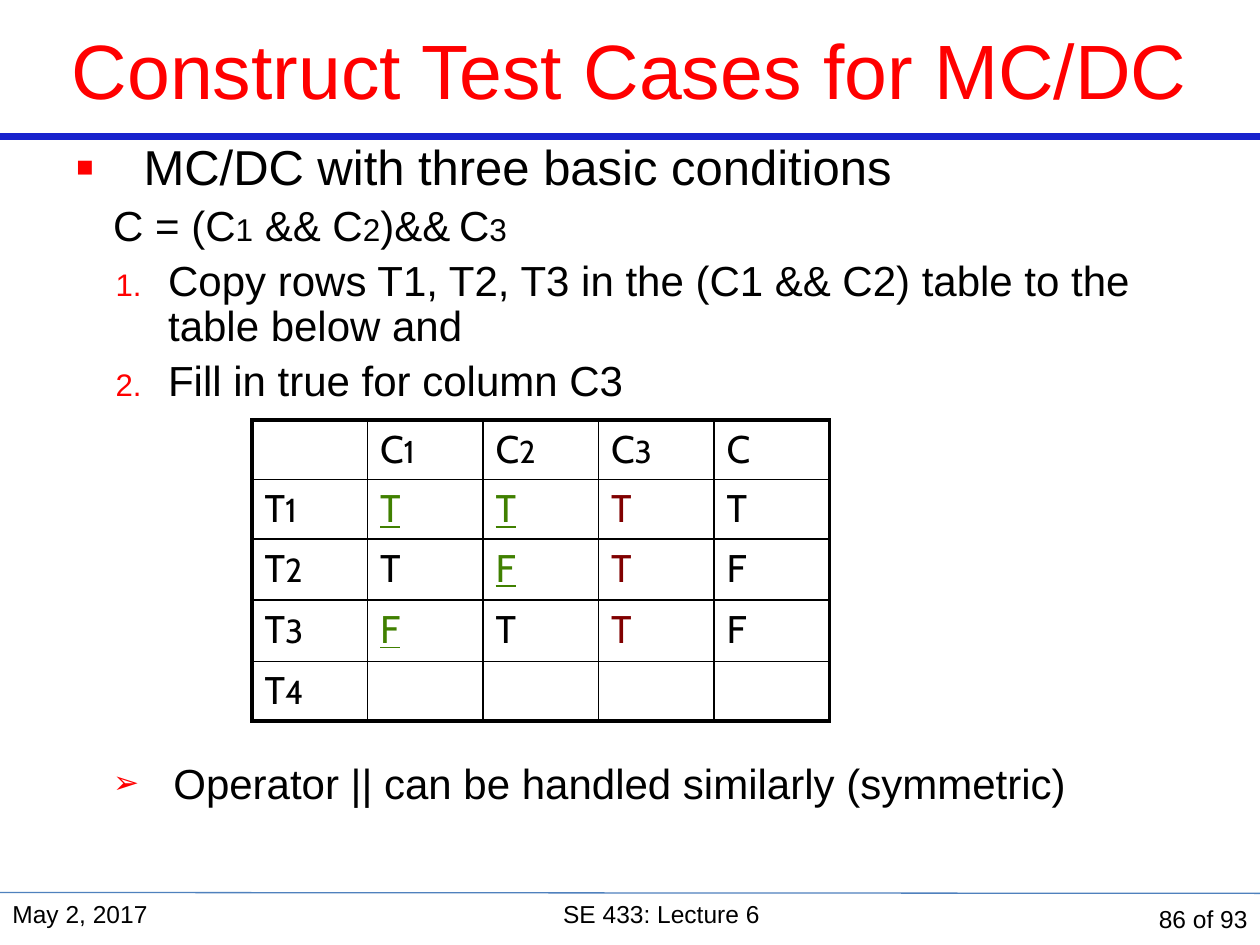
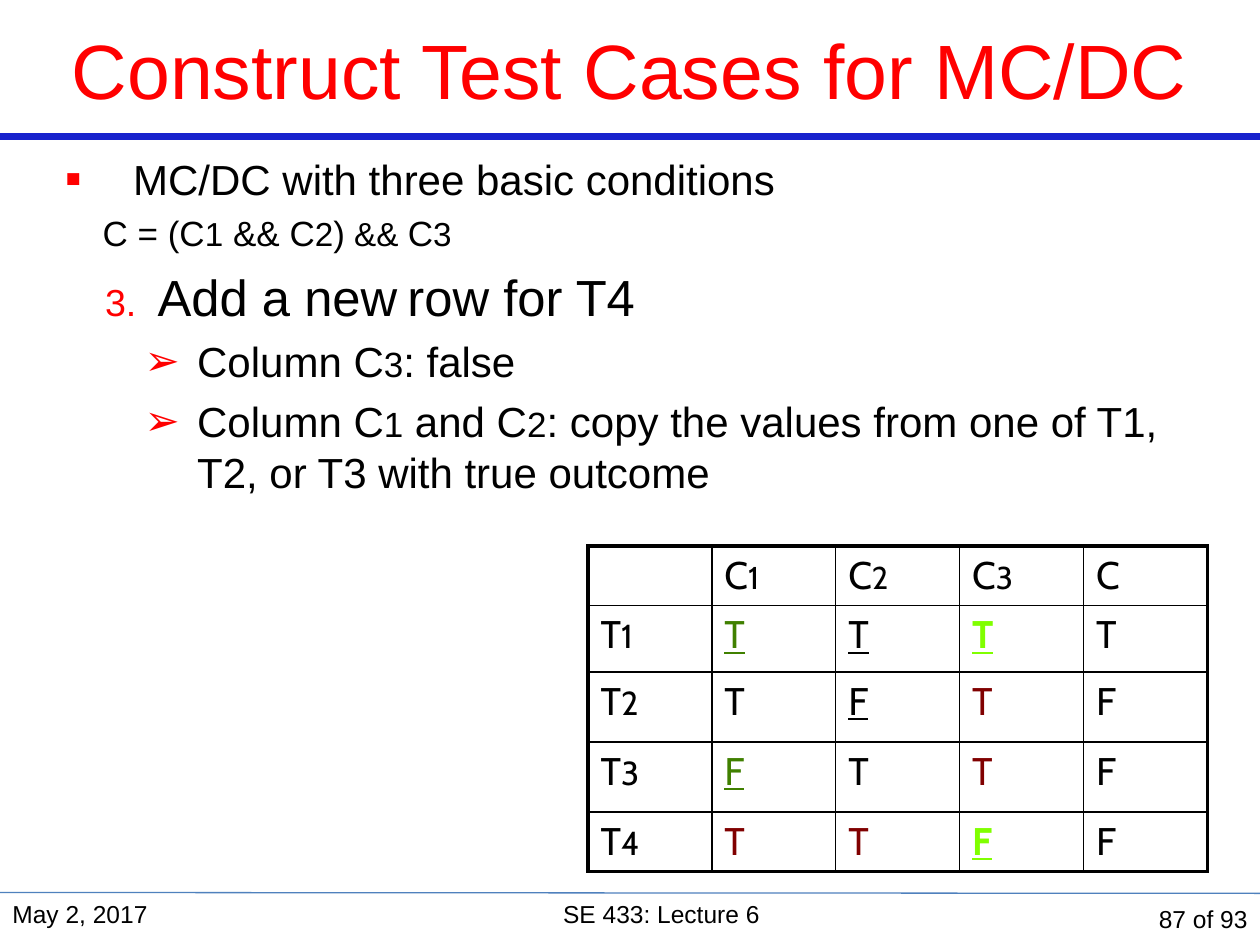
from lxml import etree
from pptx import Presentation
from pptx import util as u
from pptx.dml import color
from pptx.enum import shapes, text
from pptx.oxml import ns

Pt = u.Pt
BLACK, RED, BLUE, STEEL = "000000", "FF0000", "1822CD", "4F81BD"
GREEN, LIME, MAROON = "408000", "80FF00", "800000"
BODY_FONT, TABLE_FONT = "Arial", "Cabin"
TITLE = "Construct Test Cases for MC/DC"
MARKS = {
    "": {"ink": BLACK},
    "green": {"ink": GREEN, "underline": True},
    "under": {"ink": BLACK, "underline": True},
    "lime": {"ink": LIME, "underline": True, "bold": True},
    "maroon": {"ink": MAROON},
}
SQUARE = {"tag": "a:buChar", "char": "▪"}
ARROW = {"tag": "a:buChar", "char": "➢"}
NUMBER = {"tag": "a:buAutoNum", "type": "arabicPeriod"}
SIZE_SWITCH = "~"
HEADINGS = ["", "C~1", "C~2", "C~3", "C"]


def rgb(value):
    return color.RGBColor.from_string(value)


def put(target, values):
    for name, value in values.items():
        setattr(target, name, value)


def add(parent, tag, **attributes):
    child = etree.SubElement(parent, ns.qn(tag))
    for name, value in attributes.items():
        child.set(name, str(value))
    return child


class Deck:
    """Lecture slides with one shared style."""

    def __init__(self):
        self.prs = Presentation()
        put(self.prs, {"slide_width": Pt(720), "slide_height": Pt(540)})
        self.slide = None

    def new_slide(self, number):
        self.slide = self.prs.slides.add_slide(self.prs.slide_layouts[6])
        self.rule(78, 78, BLUE, 4.5)
        self.rule(510, 510.5, STEEL, 0.75)
        middle, align = text.MSO_ANCHOR.MIDDLE, text.PP_ALIGN
        self.label(TITLE, (0, 0, 720, 78), 44, RED, align.CENTER, middle)
        self.label("May 2, 2017", (0, 510, 156, 30), 14)
        self.label("SE 433: Lecture 6", (156, 510, 444, 30), 14, BLACK, align.CENTER)
        self.label(f"{number} of 93", (600, 510, 120, 30), 14, BLACK, align.RIGHT, middle)

    def rule(self, start, end, ink, width):
        line = self.slide.shapes.add_connector(
            shapes.MSO_CONNECTOR.STRAIGHT, Pt(0), Pt(start), Pt(720), Pt(end))
        line.line.color.rgb = rgb(ink)
        line.line.width = Pt(width)
        add(line._element.spPr, "a:effectLst")

    def frame(self, box, anchor=text.MSO_ANCHOR.TOP):
        frame = self.slide.shapes.add_textbox(*map(Pt, box)).text_frame
        put(frame, {"word_wrap": True, "vertical_anchor": anchor})
        return frame

    def add_wording(self, paragraph, wording, sizes, font=BODY_FONT, ink=BLACK, **look):
        for index, part in enumerate(wording.split(SIZE_SWITCH)):
            run = paragraph.add_run()
            run.text = part
            put(run.font, {"name": font, "size": Pt(sizes[index % 2]), **look})
            run.font.color.rgb = rgb(ink)

    def label(self, wording, box, size, ink=BLACK, align=text.PP_ALIGN.LEFT,
              anchor=text.MSO_ANCHOR.TOP):
        paragraph = self.frame(box, anchor).paragraphs[0]
        paragraph.alignment = align
        self.add_wording(paragraph, wording, (size,) * 2, ink=ink)

    def body(self, box, spacing, points):
        frame = self.frame(box)
        for index, point in enumerate(points):
            paragraph = frame.add_paragraph() if index else frame.paragraphs[0]
            self.point(paragraph, spacing, **point)

    def point(self, paragraph, spacing, wording, sizes, level=1, margin=53, hang=30,
              bullet=None, scale=74, gap=None):
        put(paragraph, {"level": level, "line_spacing": spacing,
                        "space_before": Pt(gap or round(0.23 * sizes[0], 1))})
        properties = paragraph._p.get_or_add_pPr()
        properties.set("marL", str(Pt(margin)))
        properties.set("indent", str(-Pt(hang)))
        if bullet:
            add(add(properties, "a:buClr"), "a:srgbClr", val=RED)
            add(properties, "a:buSzPct", val=scale * 1000)
            add(properties, "a:buFont", typeface=BODY_FONT)
            add(properties, **bullet)
        self.add_wording(paragraph, wording, sizes)

    def truth_table(self, left, top, column, heights, rows):
        cells = [HEADINGS] + [[f"T~{i}"] + row for i, row in enumerate(rows, 1)]
        last_row, last_column = len(cells) - 1, len(HEADINGS) - 1
        table = self.slide.shapes.add_table(
            len(cells), len(HEADINGS), Pt(left), Pt(top),
            Pt(column * len(HEADINGS)), Pt(sum(heights))).table
        put(table, {"first_row": False, "horz_banding": False})
        for r, (row, height) in enumerate(zip(cells, heights)):
            table.rows[r].height = Pt(height)
            for c, entry in enumerate(row):
                cell = table.cell(r, c)
                self.borders(cell, L=c == 0, R=c == last_column, T=r == 0, B=r == last_row)
                cell.fill.background()
                paragraph = cell.text_frame.paragraphs[0]
                paragraph.space_before = Pt(6)
                wording, _, mark = entry.partition(" ")
                if wording:
                    self.add_wording(paragraph, wording, (22, 19 if r else 18), TABLE_FONT,
                                     **MARKS[mark])

    def borders(self, cell, **outer):
        for side, is_outer in outer.items():
            line = add(cell._tc.get_or_add_tcPr(), f"a:ln{side}",
                       w=Pt(2.25 if is_outer else 1))
            add(add(line, "a:solidFill"), "a:srgbClr", val=BLACK)


def copy_rows_slide(deck):
    deck.new_slide(86)
    deck.body((36, 78, 648, 426), 0.9, [
        dict(wording="MC/DC with three basic conditions", sizes=(28, 28), level=0,
             margin=39, hang=39, bullet=SQUARE, scale=114),
        dict(wording="C = (C~1~ && C~2~)&&~ ~C~3", sizes=(24, 18), margin=21.6, hang=0),
        dict(wording="Copy rows T1, T2, T3 in the (C1 && C2) table to the table below and",
             sizes=(24, 24), bullet=NUMBER),
        dict(wording="Fill in true for column C3", sizes=(24, 24), bullet=NUMBER),
        dict(wording="Operator || can be handled similarly (symmetric)",
             sizes=(24, 24), margin=56, hang=34.5, bullet=ARROW, gap=204),
    ])
    deck.truth_table(144, 240, 66, [34, 34, 35, 35, 34], [
        ["T green", "T green", "T maroon", "T"],
        ["T", "F green", "T maroon", "F"],
        ["F green", "T", "T maroon", "F"],
        [""] * 4,
    ])


def add_row_slide(deck):
    deck.new_slide(87)
    deck.body((30, 84, 648, 428), 1.0, [
        dict(wording="MC/DC with three basic conditions", sizes=(24, 24), level=0,
             margin=39, hang=39, bullet=SQUARE, scale=114),
        dict(wording="C = (C~1~ && C~2~)~ && ~C~3", sizes=(20, 19), margin=21.6, hang=0),
        dict(wording="Add a new~ ~row for T4", sizes=(29, 20),
             bullet={**NUMBER, "startAt": 3}),
        dict(wording="Column C~3~: false", sizes=(24, 20), level=2, margin=75.6,
             bullet=ARROW, scale=100),
        dict(wording="Column C~1~ and C~2~: copy the values from one of T1, "
                     "T2, or T3 with true outcome",
             sizes=(24, 20), level=2, margin=75.6, bullet=ARROW, scale=100),
    ])
    deck.truth_table(336, 312, 70.8, [34, 38, 40, 40, 34], [
        ["T green", "T under", "T lime", "T"],
        ["T", "F under", "T maroon", "F"],
        ["F green", "T", "T maroon", "F"],
        ["T maroon", "T maroon", "F lime", "F"],
    ])


def main():
    deck = Deck()
    copy_rows_slide(deck)
    add_row_slide(deck)
    deck.prs.save("out.pptx")


if __name__ == "__main__":
    main()
